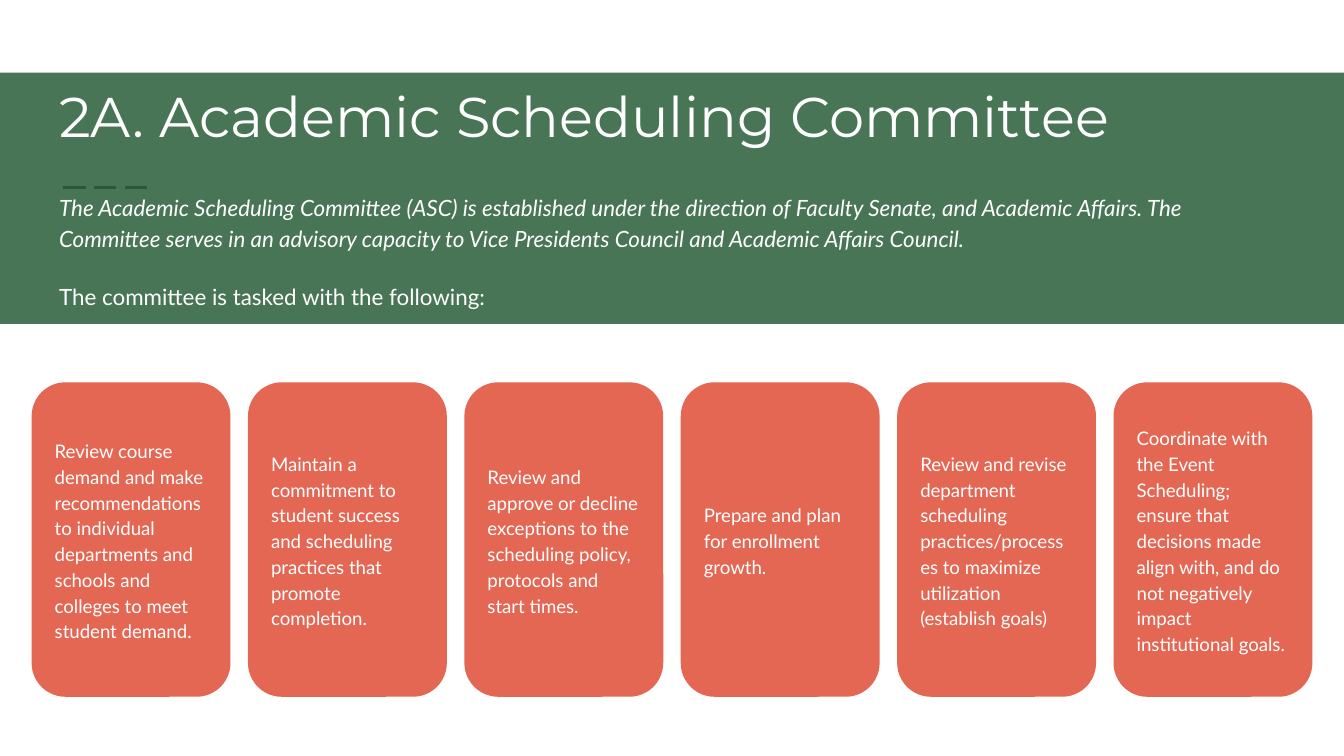
from dataclasses import dataclass

from lxml.etree import SubElement
from pptx import Presentation
from pptx.dml.color import RGBColor
from pptx.enum.dml import MSO_LINE
from pptx.enum.shapes import MSO_CONNECTOR, MSO_SHAPE
from pptx.enum.text import MSO_ANCHOR, MSO_AUTO_SIZE, PP_ALIGN
from pptx.oxml.ns import qn
from pptx.util import Inches, Pt


@dataclass(frozen=True)
class Theme:
    green: str = "275D38"
    coral: str = "E1523D"
    gray: str = "424242"
    white: str = "FFFFFF"
    heading_font: str = "Montserrat"
    body_font: str = "Lato"
    title_size: int = 30
    body_size: int = 12
    card_size: int = 10
    line_spacing: float = 1.15


THEME = Theme()
WIDTH = Inches(10)
HEIGHT = WIDTH * 9 // 16
COLUMNS, ROWS = 100, 56.25
CARD_LEFT, CARD_WIDTH, CARD_GAP = 2.35, 14.8, 1.3

TITLE = "2A. Academic Scheduling Committee"
MISSION = (
    "The Academic Scheduling Committee (ASC) is established under the direction "
    "of Faculty Senate, and Academic Affairs. The Committee serves in an advisory "
    "capacity to Vice Presidents Council and Academic Affairs Council."
)
LEAD_IN = "The committee is tasked with the following:"
TASKS = [
    "Review course demand and make recommendations to individual departments "
    "and schools and colleges to meet student demand.",
    "Maintain a commitment to student success and scheduling practices that "
    "promote completion.",
    "Review and approve or decline exceptions to the scheduling policy, "
    "protocols and start times.",
    "Prepare and plan for enrollment growth.",
    "Review and revise department scheduling practices/processes to maximize "
    "utilization (establish goals)",
    "Coordinate with the Event Scheduling; ensure that decisions made align "
    "with, and do not negatively impact institutional goals.",
]


def grid(left, top, width, height):
    column, row = WIDTH / COLUMNS, HEIGHT / ROWS
    return (round(left * column), round(top * row),
            round(width * column), round(height * row))


def place(shape, *cells):
    shape.left, shape.top, shape.width, shape.height = grid(*cells)


def format_frame(text_frame, anchor):
    text_frame.word_wrap = True
    text_frame.auto_size = MSO_AUTO_SIZE.NONE
    text_frame.vertical_anchor = anchor
    text_frame.margin_left = text_frame.margin_right = Inches(0.1)
    text_frame.margin_top = text_frame.margin_bottom = Inches(0.1)


def format_paragraph(paragraph, font_name, size, line_spacing, italic=False):
    paragraph.alignment = PP_ALIGN.LEFT
    paragraph.line_spacing = line_spacing
    paragraph.space_before = Pt(0)
    for run in paragraph.runs:
        run.font.name = font_name
        run.font.size = Pt(size)
        run.font.italic = italic
        run.font.color.rgb = RGBColor.from_string(THEME.white)


def add_panel(slide, kind, cells, color, opacity):
    shape = slide.shapes.add_shape(kind, *grid(*cells))
    shape.shadow.inherit = False
    shape.line.fill.background()
    shape.fill.solid()
    shape.fill.fore_color.rgb = RGBColor.from_string(color)
    color_element = shape.element.spPr.find(qn("a:solidFill"))[0]
    SubElement(color_element, qn("a:alpha"), val=str(opacity * 1000))
    return shape


def add_dashes(slide):
    left, top, width, _ = grid(4.7, 13.95, 6.7, 0)
    line = slide.shapes.add_connector(
        MSO_CONNECTOR.STRAIGHT, left, top, left + width, top)
    line.line.color.rgb = RGBColor.from_string(THEME.gray)
    line.line.width = Pt(1.5)
    line.line.dash_style = MSO_LINE.LONG_DASH
    SubElement(line.element.spPr, qn("a:effectLst"))
    return line


def fill_title(title):
    place(title, 3.4, 4.1, 93.2, 8)
    title.text_frame.text = TITLE
    format_frame(title.text_frame, MSO_ANCHOR.BOTTOM)
    format_paragraph(title.text_frame.paragraphs[0],
                     THEME.heading_font, THEME.title_size, 1.0)


def fill_body(body):
    place(body, 3.4, 13.15, 93.2, 11)
    body.text_frame.text = "\n".join([MISSION, LEAD_IN])
    format_frame(body.text_frame, MSO_ANCHOR.TOP)
    mission, lead_in = body.text_frame.paragraphs
    for paragraph in (mission, lead_in):
        properties = paragraph._p.get_or_add_pPr()
        properties.set("marL", "0")
        properties.set("indent", "0")
        SubElement(properties, qn("a:buNone"))
        format_paragraph(paragraph, THEME.body_font, THEME.body_size,
                         THEME.line_spacing, italic=paragraph is mission)
    mission.space_after = Pt(14.5)


def add_card(slide, index, task):
    left = CARD_LEFT + index * (CARD_WIDTH + CARD_GAP)
    card = add_panel(slide, MSO_SHAPE.ROUNDED_RECTANGLE,
                     (left, 28.45, CARD_WIDTH, 23.4), THEME.coral, 88)
    card.adjustments[0] = 0.17
    card.text_frame.text = task
    format_frame(card.text_frame, MSO_ANCHOR.MIDDLE)
    format_paragraph(card.text_frame.paragraphs[0], THEME.body_font,
                     THEME.card_size, THEME.line_spacing)


def main():
    presentation = Presentation()
    presentation.slide_width, presentation.slide_height = WIDTH, HEIGHT
    slide = presentation.slides.add_slide(presentation.slide_layouts[1])
    title, body = slide.placeholders
    dashes = add_dashes(slide)
    band = add_panel(slide, MSO_SHAPE.RECTANGLE, (0, 5.4, COLUMNS, 18.7),
                     THEME.green, 85)
    for backdrop in (dashes, band):
        title.element.addprevious(backdrop.element)
    fill_title(title)
    fill_body(body)
    for index, task in enumerate(TASKS):
        add_card(slide, index, task)
    presentation.save("out.pptx")


if __name__ == "__main__":
    main()
